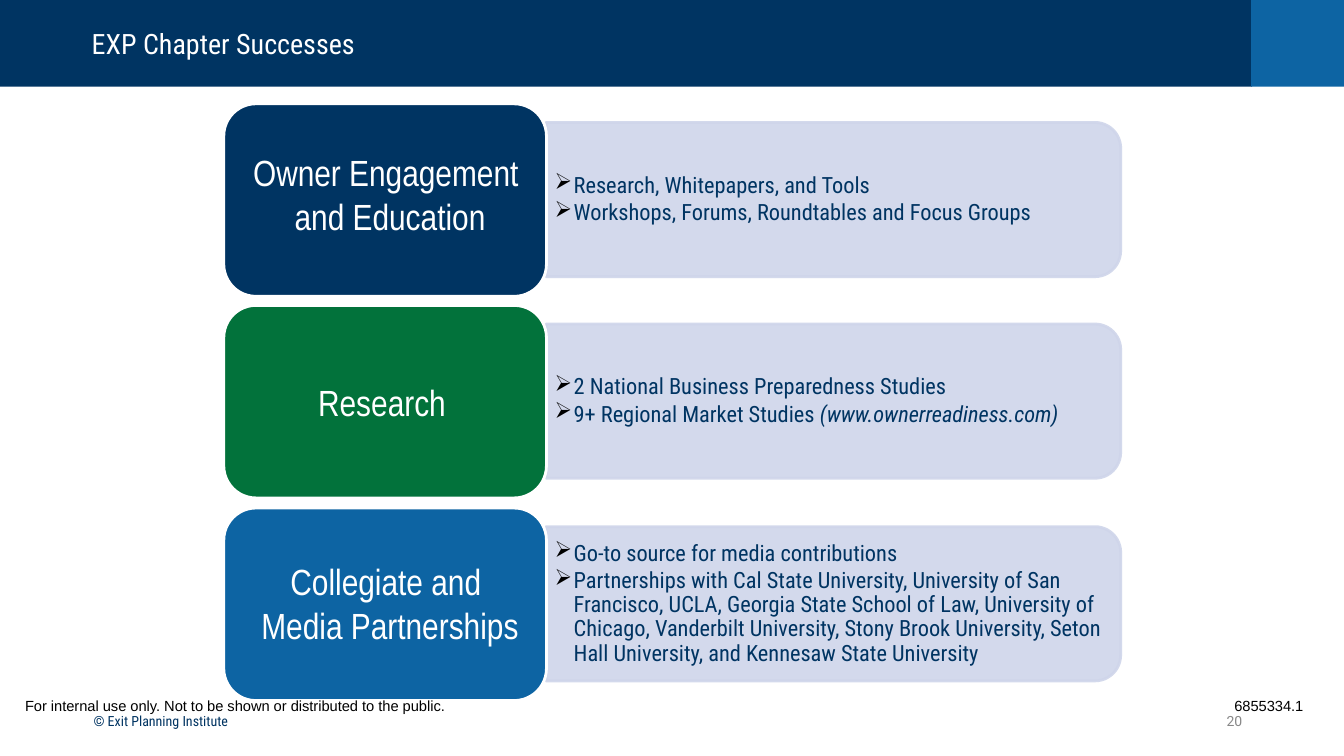
from lxml.etree import SubElement
from pptx import Presentation
from pptx.dml.color import RGBColor
from pptx.enum.shapes import MSO_SHAPE as Preset
from pptx.enum.text import MSO_ANCHOR as Anchor, MSO_AUTO_SIZE as AutoSize, PP_ALIGN as Align
from pptx.oxml.ns import qn
from pptx.util import Emu, Pt

EMU_PER_PX = 9144
SLIDE_W, SLIDE_H = 1333, 750
NAVY = RGBColor(0x00, 0x34, 0x62)
BLUE = RGBColor(0x0D, 0x64, 0xA3)
GREEN = RGBColor(0x02, 0x72, 0x3B)
LAVENDER = RGBColor(0xCF, 0xD5, 0xEA)
GRAY = RGBColor(0x88, 0x88, 0x88)
WHITE = RGBColor(0xFF, 0xFF, 0xFF)
BLACK = RGBColor(0x00, 0x00, 0x00)
CONDENSED = "Roboto Condensed"

FIRST_TOP, DOUBLE_PITCH = 103, 401
CARD_LEFT, CARD_W, CARD_H = 222, 320, 191
PANEL_LEFT, PANEL_LENGTH, PANEL_DEPTH = 542, 570, 153

TOPICS = [
    (NAVY, (237, 144, 98), "Owner Engagement \nand Education",
     [("Research, Whitepapers, and Tools", ""),
      ("Workshops, Forums, Roundtables and Focus Groups", "")]),
    (GREEN, (229, 372, 54), "Research",
     [("2 National Business Preparedness Studies", ""),
      ("9+ Regional Market Studies ", "(www.ownerreadiness.com)")]),
    (BLUE, (237, 550, 98), "Collegiate and \nMedia Partnerships",
     [("Go-to source for media contributions", ""),
      ("Partnerships with Cal State University, University of San Francisco, "
       "UCLA, Georgia State School of Law, University of Chicago, Vanderbilt "
       "University, Stony Brook University, Seton Hall University, and "
       "Kennesaw State University", "")]),
]


def px(length):
    return Emu(length * EMU_PER_PX)


def box(*lengths):
    return [px(length) for length in lengths]


def format_runs(paragraph, font_name, size, color):
    for run in paragraph.runs:
        run.font.name = font_name
        run.font.size = Pt(size)
        run.font.color.rgb = color


def add_block(slide, preset, bounds, fill, outline=None):
    block = slide.shapes.add_shape(preset, *box(*bounds))
    block.shadow.inherit = False
    block.fill.solid()
    block.fill.fore_color.rgb = fill
    if outline is None:
        block.line.fill.background()
    else:
        block.line.color.rgb = outline
        block.line.width = Pt(2)
    return block


def add_label(slide, bounds, text, font_name, size, color, align=Align.LEFT, anchor=Anchor.TOP):
    label = slide.shapes.add_textbox(*box(*bounds))
    frame = label.text_frame
    frame.word_wrap = True
    frame.vertical_anchor = anchor
    frame.text = text
    for paragraph in frame.paragraphs:
        paragraph.alignment = align
        format_runs(paragraph, font_name, size, color)
    return label


def add_header(slide):
    title = slide.shapes.title
    for bounds, fill in (((0, 0, 1242, 86), NAVY), ((1241, 0, 92, 86), BLUE)):
        band = add_block(slide, Preset.RECTANGLE, bounds, fill)
        title.element.addprevious(band.element)
    title.left, title.top, title.width, title.height = box(81, 25, 690, 36)
    frame = title.text_frame
    frame.text = "EXP Chapter Successes"
    frame.auto_size = AutoSize.NONE
    frame.vertical_anchor = Anchor.TOP
    heading = frame.paragraphs[0]
    heading.alignment = Align.LEFT
    heading.line_spacing = 0.9
    format_runs(heading, CONDENSED, 20, WHITE)


def add_panel(slide, middle):
    left = PANEL_LEFT + (PANEL_LENGTH - PANEL_DEPTH) // 2
    top = middle - PANEL_LENGTH // 2
    panel = add_block(slide, Preset.ROUND_2_SAME_RECTANGLE,
                      (left, top, PANEL_DEPTH, PANEL_LENGTH), LAVENDER, LAVENDER)
    panel.rotation = 90
    for color in panel.element.spPr.iter(qn("a:srgbClr")):
        SubElement(color, qn("a:alpha"), val="90000")


def set_bullet(paragraph):
    properties = paragraph._p.get_or_add_pPr()
    properties.set("marL", str(px(19)))
    properties.set("indent", str(px(-19)))
    bullet_color = SubElement(properties, qn("a:buClr"))
    SubElement(bullet_color, qn("a:srgbClr"), val=str(BLACK))
    SubElement(properties, qn("a:buChar"), char="➢")


def add_points(slide, top, points):
    frame = slide.shapes.add_textbox(*box(543, top, 562, 138)).text_frame
    frame.word_wrap = True
    frame.vertical_anchor = Anchor.MIDDLE
    frame.margin_left = frame.margin_right = px(7)
    frame.margin_top = frame.margin_bottom = px(3)
    frame.text = "\n".join(text for text, _ in points)
    for paragraph, (_, note) in zip(frame.paragraphs, points):
        set_bullet(paragraph)
        paragraph.line_spacing = 0.9
        paragraph.space_after = Pt(2.4)
        if note:
            source = paragraph.add_run()
            source.text = note
            source.font.italic = True
        format_runs(paragraph, CONDENSED, 16, NAVY)


def add_topics(slide):
    for index, (fill, _, _, points) in enumerate(TOPICS):
        top = FIRST_TOP + index * DOUBLE_PITCH // 2
        add_panel(slide, top + CARD_H // 2)
        add_points(slide, top + 26, points)
        add_block(slide, Preset.ROUNDED_RECTANGLE,
                  (CARD_LEFT, top, CARD_W, CARD_H), fill, WHITE)
    for _, (left, top, height), heading, _ in TOPICS:
        add_label(slide, (left, top, 300, height), heading,
                  "Arial Narrow", 26, WHITE, Align.CENTER)


def add_footer(slide):
    add_label(slide, (83, 702, 295, 40), "© Exit Planning Institute", CONDENSED, 10, NAVY)
    add_label(slide, (942, 695, 300, 40), "20", "Roboto", 10, GRAY, Align.RIGHT, Anchor.MIDDLE)
    disclaimer = add_label(
        slide, (15, 686, 1303, 29),
        "For internal use only. Not to be shown or distributed to the public.\t6855334.1",
        "Arial", 10.5, BLACK)
    properties = disclaimer.text_frame.paragraphs[0]._p.get_or_add_pPr()
    tabs = SubElement(properties, qn("a:tabLst"))
    SubElement(tabs, qn("a:tab"), pos=str(px(1268)), algn="r")


def main():
    deck = Presentation()
    deck.slide_width, deck.slide_height = box(SLIDE_W, SLIDE_H)
    slide = deck.slides.add_slide(deck.slide_layouts.get_by_name("Title Only"))
    add_header(slide)
    add_topics(slide)
    add_footer(slide)
    deck.save("out.pptx")


if __name__ == "__main__":
    main()
